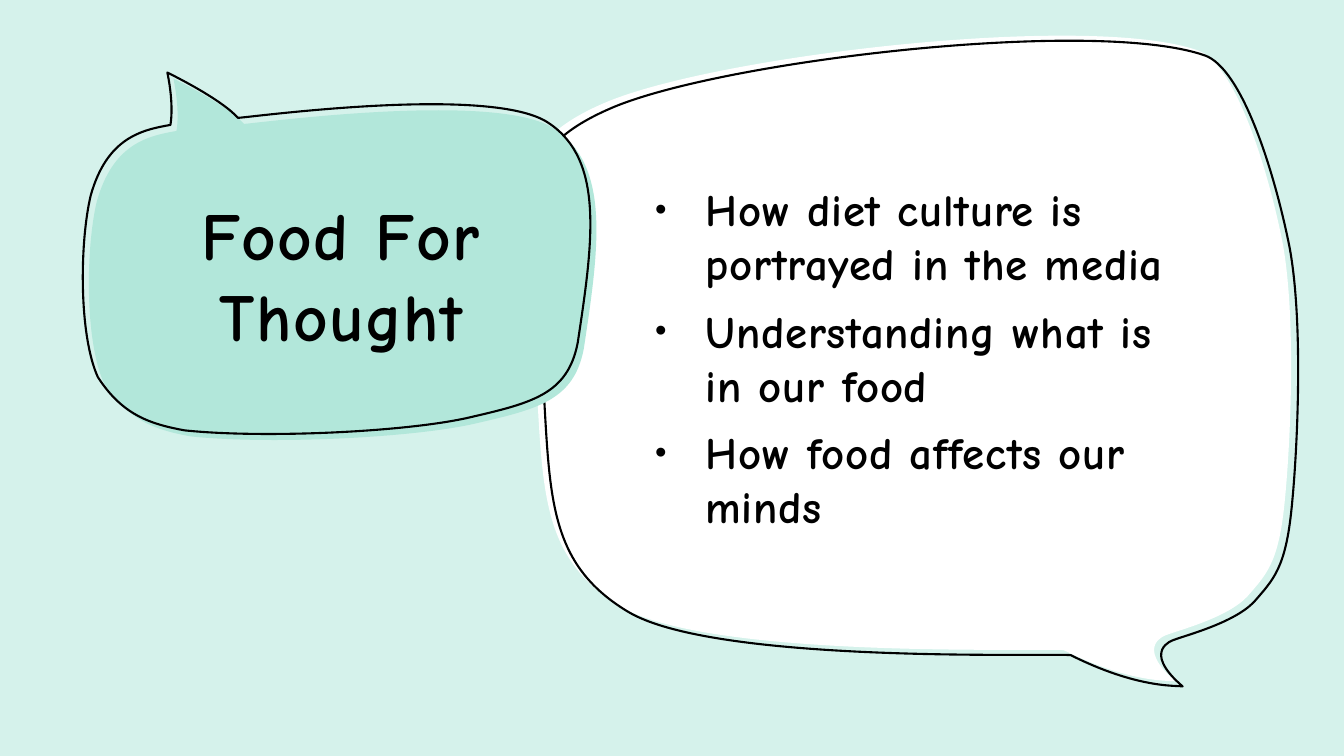
"""Build the Food For Thought slide with two overlapping speech bubbles."""
from lxml import etree
from pptx import Presentation
from pptx.dml.color import RGBColor
from pptx.enum.text import MSO_ANCHOR, PP_ALIGN
from pptx.oxml.ns import qn
from pptx.util import Inches, Pt

MIDDLE = MSO_ANCHOR.MIDDLE
CENTER, LEFT = PP_ALIGN.CENTER, PP_ALIGN.LEFT

LIST_BUBBLE = [
    (11.64, 6.35),
    (11.77, 6.3), (12.24, 6.18), (12.44, 5.97),
    (12.63, 5.75), (12.75, 5.64), (12.81, 5.05),
    (12.87, 4.47), (12.93, 3.2), (12.79, 2.45),
    (12.64, 1.7), (12.32, 0.68), (11.95, 0.55),
    (10.86, 0.17), (7.17, 0.6), (6.07, 1.07),
    (4.97, 1.54), (5.27, 2.11), (5.36, 3.36),
    (5.47, 4.79), (5.35, 5.54), (6.23, 6.07),
    (7.1, 6.59), (10.39, 6.48), (10.62, 6.5),
    (11.28, 6.83), (11.66, 6.8), (11.73, 6.81),
    (11.31, 6.45), (11.64, 6.35), (11.64, 6.35),
]
TITLE_BUBBLE = [
    (1.66, 0.72),
    (1.74, 0.76), (2.2, 0.99), (2.36, 1.17),
    (2.52, 1.16), (4.88, 0.84), (5.44, 1.22),
    (6, 1.59), (5.88, 2.41), (5.73, 3.4),
    (5.63, 3.92), (5.27, 4), (4.62, 4.15),
    (3.97, 4.29), (2.59, 4.35), (1.83, 4.27),
    (1.51, 4.21), (1.22, 4.13), (0.97, 3.74),
    (0.78, 3.32), (0.79, 2.4), (0.9, 1.94),
    (1.06, 1.37), (1.4, 1.29), (1.69, 1.24),
    (1.69, 1.24), (1.73, 1.06), (1.66, 0.72),
]
TOPICS = [
    "How diet culture is portrayed in the media",
    "Understanding what is in our food",
    "How food affects our minds",
]


def color(value):
    """Return the colour for a hex string."""
    return RGBColor.from_string(value)


def add_text(page, place, lines, size, spacing, align):
    """Add a middle-anchored text box and return its paragraphs."""
    box = page.shapes.add_textbox(*map(Inches, place))
    frame = box.text_frame
    frame.word_wrap = True
    frame.vertical_anchor = MIDDLE
    frame.text = "\n".join(lines)
    for para in frame.paragraphs:
        para.alignment = align
        span = para.runs[0]
        formats = {"name": "Comic Neue", "size": Pt(size), "bold": True}
        for name, value in formats.items():
            setattr(span.font, name, value)
        span.font.color.rgb = color("000000")
        span.font._element.set("spc", str(spacing))
    return frame.paragraphs


deck = Presentation()
deck.slide_width, deck.slide_height = Inches(13.33), Inches(7.5)
page = deck.slides.add_slide(deck.slide_layouts[6])
page.background.fill.solid()
page.background.fill.fore_color.rgb = color("D5F2EB")

bubbles = [
    (LIST_BUBBLE, (-0.07, -0.05), "FFFFFF"),
    (LIST_BUBBLE, (0, 0), None),
    (TITLE_BUBBLE, (0.06, 0.06), "B2E7DA"),
    (TITLE_BUBBLE, (0, 0), None),
]
for points, (shift_x, shift_y), fill in bubbles:
    start, *controls = [(Inches(x + shift_x), Inches(y + shift_y)) for x, y in points]
    builder = page.shapes.build_freeform(*start)
    builder.add_line_segments(controls, close=True)
    bubble = builder.convert_to_shape()
    bubble.shadow.inherit = False

    segments = list(bubble._element.iter(qn("a:lnTo")))
    for first in range(0, len(controls), 3):
        curve = etree.Element(qn("a:cubicBezTo"))
        segments[first].addprevious(curve)
        for segment in segments[first:first + 3]:
            curve.append(segment[0])
            segment.getparent().remove(segment)

    if fill:
        bubble.fill.solid()
        bubble.fill.fore_color.rgb = color(fill)
        bubble.line.fill.background()
    else:
        bubble.fill.background()
        bubble.line.color.rgb = color("000000")
        bubble.line.width = Pt(1.5)

add_text(page, (1.34, 1.58, 4.09, 2.28), ["Food For Thought"], 48, 100, CENTER)

for para in add_text(page, (6.4, 1.24, 5.58, 4.61), TOPICS, 32, 50, LEFT):
    para.space_before = Pt(10)
    properties = para._p.get_or_add_pPr()
    properties.set("marL", str(Inches(0.5)))
    properties.set("indent", str(-Inches(0.5)))
    etree.SubElement(properties, qn("a:buSzPct"), val="73000")
    etree.SubElement(properties, qn("a:buFont"), typeface="Arial")
    etree.SubElement(properties, qn("a:buChar"), char="•")

deck.save("out.pptx")
